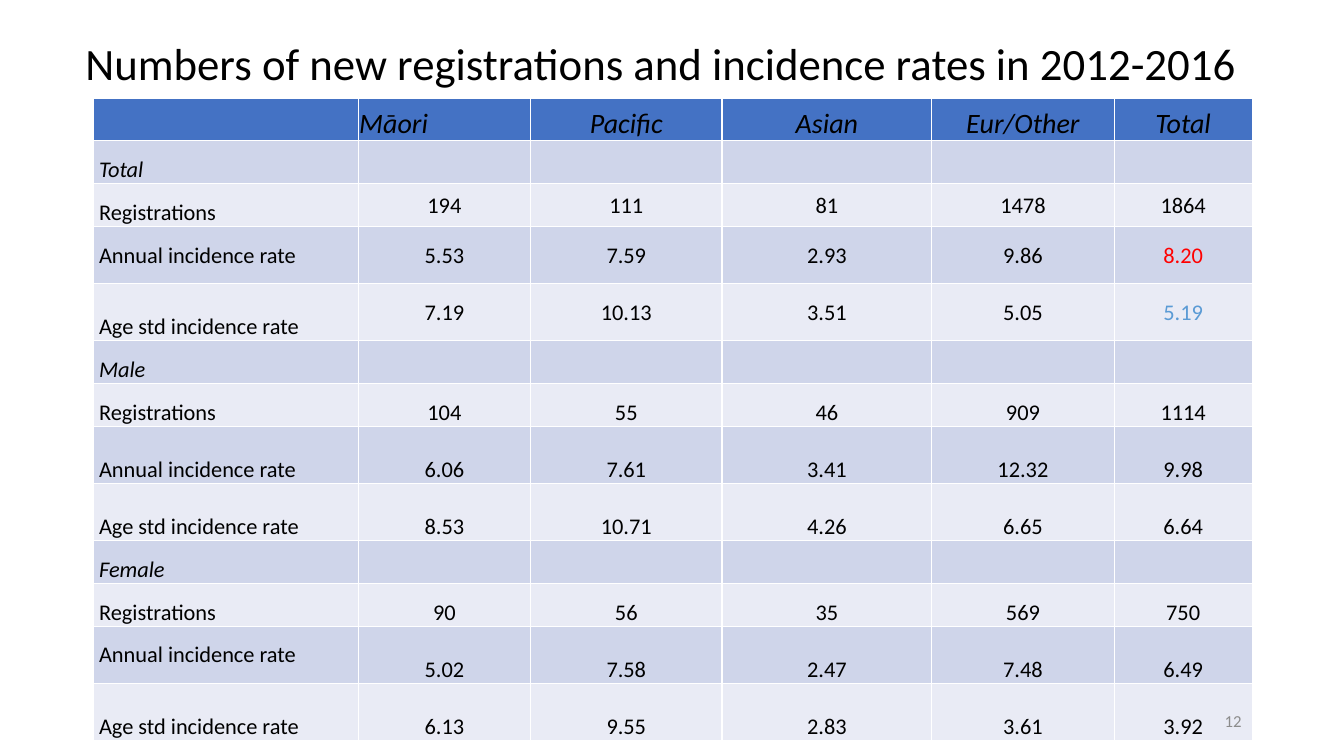
import pptx
import pptx.dml.color
import pptx.enum.text
import pptx.util

Pt = pptx.util.Pt
ALIGN = pptx.enum.text.PP_ALIGN
ANCHOR = pptx.enum.text.MSO_ANCHOR

TITLE = "Numbers of new registrations and incidence rates in 2012-2016"
SLIDE_NUMBER = "12"
HEADER = ("", "Māori", "Pacific", "Asian", "Eur/Other", "Total")
REGISTRATIONS = "Registrations"
ANNUAL = "Annual incidence rate"
AGE_STD = "Age std incidence rate"
GROUPS = {
    "Total": (
        (REGISTRATIONS, "194", "111", "81", "1478", "1864"),
        (ANNUAL, "5.53", "7.59", "2.93", "9.86", "8.20"),
        (AGE_STD, "7.19", "10.13", "3.51", "5.05", "5.19"),
    ),
    "Male": (
        (REGISTRATIONS, "104", "55", "46", "909", "1114"),
        (ANNUAL, "6.06", "7.61", "3.41", "12.32", "9.98"),
        (AGE_STD, "8.53", "10.71", "4.26", "6.65", "6.64"),
    ),
    "Female": (
        (REGISTRATIONS, "90", "56", "35", "569", "750"),
        (ANNUAL, "5.02", "7.58", "2.47", "7.48", "6.49"),
        (AGE_STD, "6.13", "9.55", "2.83", "3.61", "3.92"),
    ),
}

FONT = "Calibri"
BLACK, GREY, RED, BLUE = "000000", "8C8C8C", "FF0000", "5B9BD5"
HEADER_FILL = "4472C4"
BAND_FILLS = ("E9EBF5", "CFD5EA")
COLUMN_WIDTHS = (189.4, 123.1, 136.8, 149.8, 130.3, 98.6)
SHORT_ROW, TALL_ROW = 30.6, 40.8
TABLE_LEFT, TABLE_TOP = 66.5, 70
CELL_MARGIN, LABEL_MARGIN = 0.7, 4.3

HIGHLIGHTS = {(3, 5): RED, (4, 5): BLUE}
# Cells centred vertically; all others sit on the bottom edge
MIDDLE_CELLS = {(row, column) for row in (2, 3, 4) for column in range(1, 6)}
MIDDLE_CELLS |= {(3, 0), (11, 0)}


def rgb(value):
    return pptx.dml.color.RGBColor.from_string(value)


def set_all(target, values):
    for name, value in values.items():
        setattr(target, name, value)


def write(paragraph, text, size, color=BLACK, alignment=ALIGN.LEFT, italic=False):
    paragraph.alignment = alignment
    run = paragraph.add_run()
    run.text = text
    set_all(run.font, {"name": FONT, "size": Pt(size), "italic": italic, "bold": False})
    run.font.color.rgb = rgb(color)


def add_text(slide, box, text, **style):
    frame = slide.shapes.add_textbox(*map(Pt, box)).text_frame
    set_all(frame, {"word_wrap": True, "vertical_anchor": ANCHOR.MIDDLE})
    write(frame.paragraphs[0], text, **style)
    return frame.paragraphs[0]


def fill_cell(cell, row, column, text):
    is_header = row == 0
    is_label = column == 0
    cell.fill.solid()
    cell.fill.fore_color.rgb = rgb(HEADER_FILL if is_header else BAND_FILLS[row % 2])
    if not text:
        return
    set_all(cell, {
        "margin_left": Pt(LABEL_MARGIN if is_label else CELL_MARGIN),
        "margin_right": Pt(CELL_MARGIN),
        "margin_top": Pt(CELL_MARGIN),
        "margin_bottom": Pt(0),
        "vertical_anchor": ANCHOR.MIDDLE if (row, column) in MIDDLE_CELLS else ANCHOR.BOTTOM,
    })
    left_aligned = is_label or (row, column) == (0, 1)
    write(cell.text_frame.paragraphs[0], text,
          size=20 if is_header else 16,
          color=HIGHLIGHTS.get((row, column), BLACK),
          alignment=ALIGN.LEFT if left_aligned else ALIGN.CENTER,
          italic=is_header or text in GROUPS)


def add_rates_table(slide):
    rows = [HEADER]
    for group, measures in GROUPS.items():
        rows += [(group,) + ("",) * (len(HEADER) - 1), *measures]
    heights = [TALL_ROW if row[0] in (ANNUAL, AGE_STD) else SHORT_ROW for row in rows]
    box = (TABLE_LEFT, TABLE_TOP, sum(COLUMN_WIDTHS), sum(heights))
    table = slide.shapes.add_table(len(rows), len(HEADER), *map(Pt, box)).table
    for column, width in zip(table.columns, COLUMN_WIDTHS):
        column.width = Pt(width)
    for table_row, height in zip(table.rows, heights):
        table_row.height = Pt(height)
    for row, texts in enumerate(rows):
        for column, text in enumerate(texts):
            fill_cell(table.cell(row, column), row, column, text)


def main():
    presentation = pptx.Presentation()
    set_all(presentation, {"slide_width": Pt(960), "slide_height": Pt(540)})
    slide = presentation.slides.add_slide(presentation.slide_layouts[6])
    title = add_text(slide, (54, 10.8, 878.4, 72.7), TITLE, size=32)
    title.line_spacing = 0.9
    add_rates_table(slide)
    add_text(slide, (678, 500.5, 216, 28.8), SLIDE_NUMBER,
             size=12, color=GREY, alignment=ALIGN.RIGHT)
    presentation.save("out.pptx")


if __name__ == "__main__":
    main()
